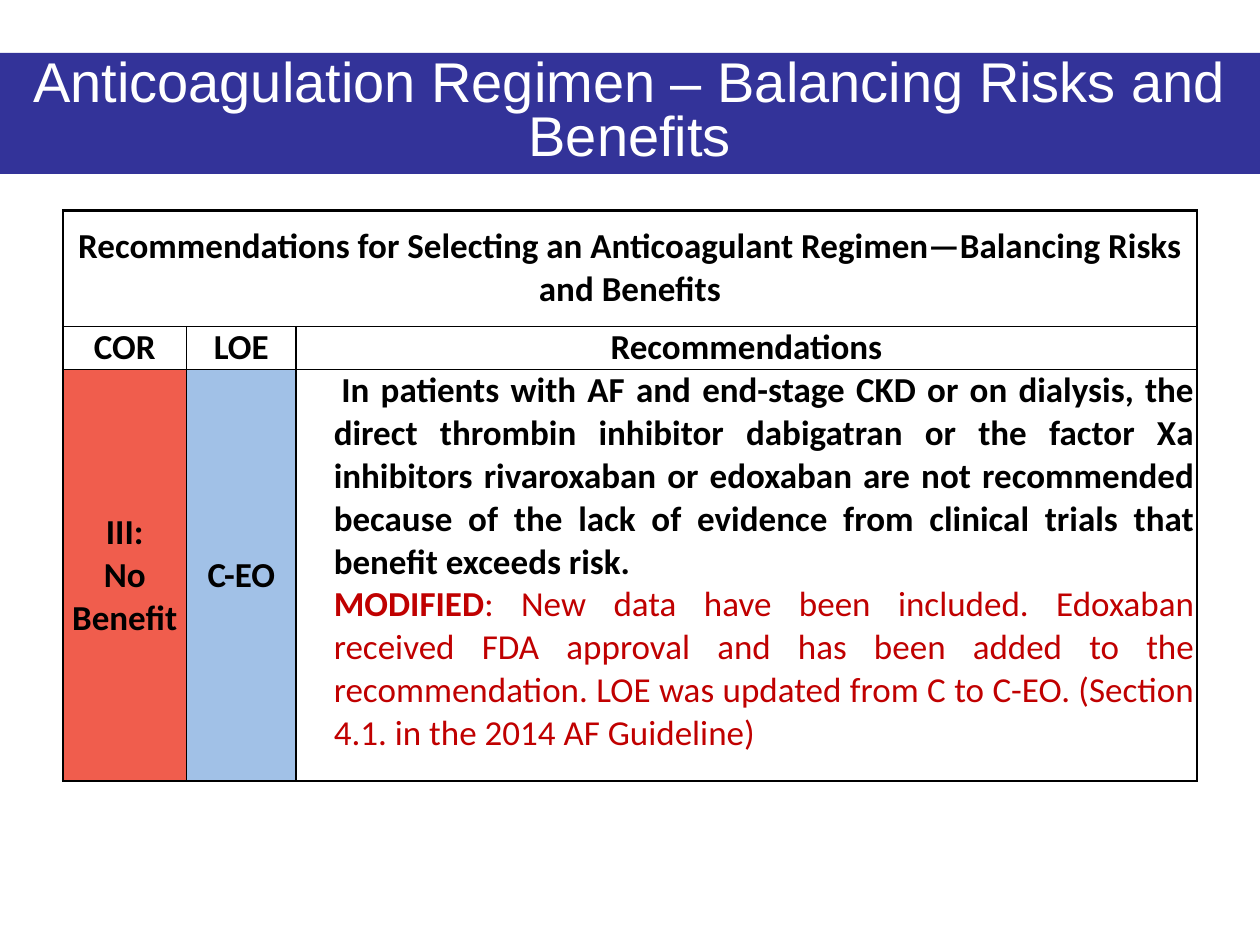
import pptx
import pptx.util
import pptx.dml.color
import pptx.enum.shapes
import pptx.enum.text
import pptx.oxml
import pptx.oxml.ns

Inches = pptx.util.Inches
Pt = pptx.util.Pt
ALIGN = pptx.enum.text.PP_ALIGN
ANCHOR = pptx.enum.text.MSO_ANCHOR
COLORS = {
    "banner": "333399",
    "white": "FFFFFF",
    "black": "000000",
    "no_benefit": "F05D4D",
    "evidence": "A1C1E7",
    "modified": "C00000",
}
RECOMMENDATION = (
    "In patients with AF and end-stage CKD or on dialysis, the direct thrombin "
    "inhibitor dabigatran or the factor Xa inhibitors rivaroxaban or edoxaban are "
    "not recommended because of the lack of evidence from clinical trials that "
    "benefit exceeds risk."
)
MODIFICATION = (
    ": New data have been included. Edoxaban received FDA approval and has been "
    "added to the recommendation. LOE was updated from C to C-EO. (Section 4.1. "
    "in the 2014 AF Guideline)"
)


def rgb(name):
    """Return the named colour."""
    return pptx.dml.color.RGBColor.from_string(COLORS[name])


def style_run(run, size, font, color, bold=False):
    """Format one run."""
    run.font.size = Pt(size)
    run.font.name = font
    run.font.bold = bold
    run.font.color.rgb = rgb(color)


def add_banner(slide, text):
    """Add the full-width title banner."""
    shape = slide.shapes.add_shape(
        pptx.enum.shapes.MSO_SHAPE.RECTANGLE,
        Inches(0), Inches(0.42), Inches(10), Inches(0.96))
    shape.shadow.inherit = False
    shape.fill.solid()
    shape.fill.fore_color.rgb = rgb("banner")
    shape.line.fill.background()
    frame = shape.text_frame
    frame.word_wrap = True
    frame.vertical_anchor = ANCHOR.MIDDLE
    frame.text = text
    paragraph = frame.paragraphs[0]
    paragraph.alignment = ALIGN.CENTER
    paragraph.line_spacing = 0.8
    style_run(paragraph.runs[0], 32, "Arial", "white")


def set_borders(cell, widths):
    """Draw the cell borders with the given widths in points."""
    properties = cell._tc.get_or_add_tcPr()
    for index, (side, width) in enumerate(widths.items()):
        properties.insert(index, pptx.oxml.parse_xml(
            f'<a:{side} {pptx.oxml.ns.nsdecls("a")} w="{Pt(width)}">'
            f'<a:solidFill><a:srgbClr val="{COLORS["black"]}"/></a:solidFill>'
            f'</a:{side}>'))


def fill_cell(cell, text, fill=None):
    """Write centred bold text and set the cell fill."""
    cell.margin_left = cell.margin_right = Inches(0.02)
    cell.margin_top = cell.margin_bottom = 0
    cell.vertical_anchor = ANCHOR.MIDDLE
    if fill:
        cell.fill.solid()
        cell.fill.fore_color.rgb = rgb(fill)
    else:
        cell.fill.background()
    cell.text_frame.text = text
    for paragraph in cell.text_frame.paragraphs:
        paragraph.alignment = ALIGN.CENTER
        for run in paragraph.runs:
            style_run(run, 20, "Calibri", "black", True)


def justify(paragraph, first_line):
    """Justify a paragraph with a left margin and first-line indent."""
    paragraph.alignment = ALIGN.JUSTIFY
    properties = paragraph._p.get_or_add_pPr()
    properties.set("marL", str(Inches(0.28)))
    properties.set("indent", str(Inches(first_line)))


def fill_recommendation(cell):
    """Write the recommendation and the note on its modification."""
    fill_cell(cell, RECOMMENDATION)
    cell.vertical_anchor = ANCHOR.TOP
    justify(cell.text_frame.paragraphs[0], 0.06)
    note = cell.text_frame.add_paragraph()
    justify(note, 0)
    for text, bold in (("MODIFIED", True), (MODIFICATION, False)):
        run = note.add_run()
        run.text = text
        style_run(run, 20, "Calibri", "modified", bold)


def add_recommendation_table(slide):
    """Add the table of recommendations."""
    column_widths = (0.98, 0.87, 7.15)
    row_heights = (0.92, 0.29, 3.27)
    table = slide.shapes.add_table(
        3, 3, Inches(0.5), Inches(1.67), Inches(9), Inches(sum(row_heights))).table
    table.first_row = table.horz_banding = False
    for column, width in zip(table.columns, column_widths):
        column.width = Inches(width)
    for row, height in zip(table.rows, row_heights):
        row.height = Inches(height)
    table.cell(0, 0).merge(table.cell(0, 2))
    fill_cell(table.cell(0, 0), "Recommendations for Selecting an Anticoagulant "
              "Regimen—Balancing Risks and Benefits")
    for column, heading in enumerate(("COR", "LOE", "Recommendations")):
        fill_cell(table.cell(1, column), heading)
    fill_cell(table.cell(2, 0), "III:\nNo Benefit", "no_benefit")
    fill_cell(table.cell(2, 1), "C-EO", "evidence")
    fill_recommendation(table.cell(2, 2))
    outer, inner = 1.5, 0.75
    for row in range(3):
        for column in range(3):
            set_borders(table.cell(row, column), {
                "lnL": outer if column == 0 else inner,
                "lnR": outer if column == 2 or row == 0 else inner,
                "lnT": outer if row == 0 else inner,
                "lnB": outer if row == 2 else inner,
            })


def main():
    """Build and save the slide."""
    presentation = pptx.Presentation()
    presentation.slide_width = Inches(10)
    presentation.slide_height = Inches(7.5)
    slide = presentation.slides.add_slide(presentation.slide_layouts[6])
    add_banner(slide, "Anticoagulation Regimen – Balancing Risks and Benefits")
    add_recommendation_table(slide)
    presentation.save("out.pptx")


if __name__ == "__main__":
    main()
